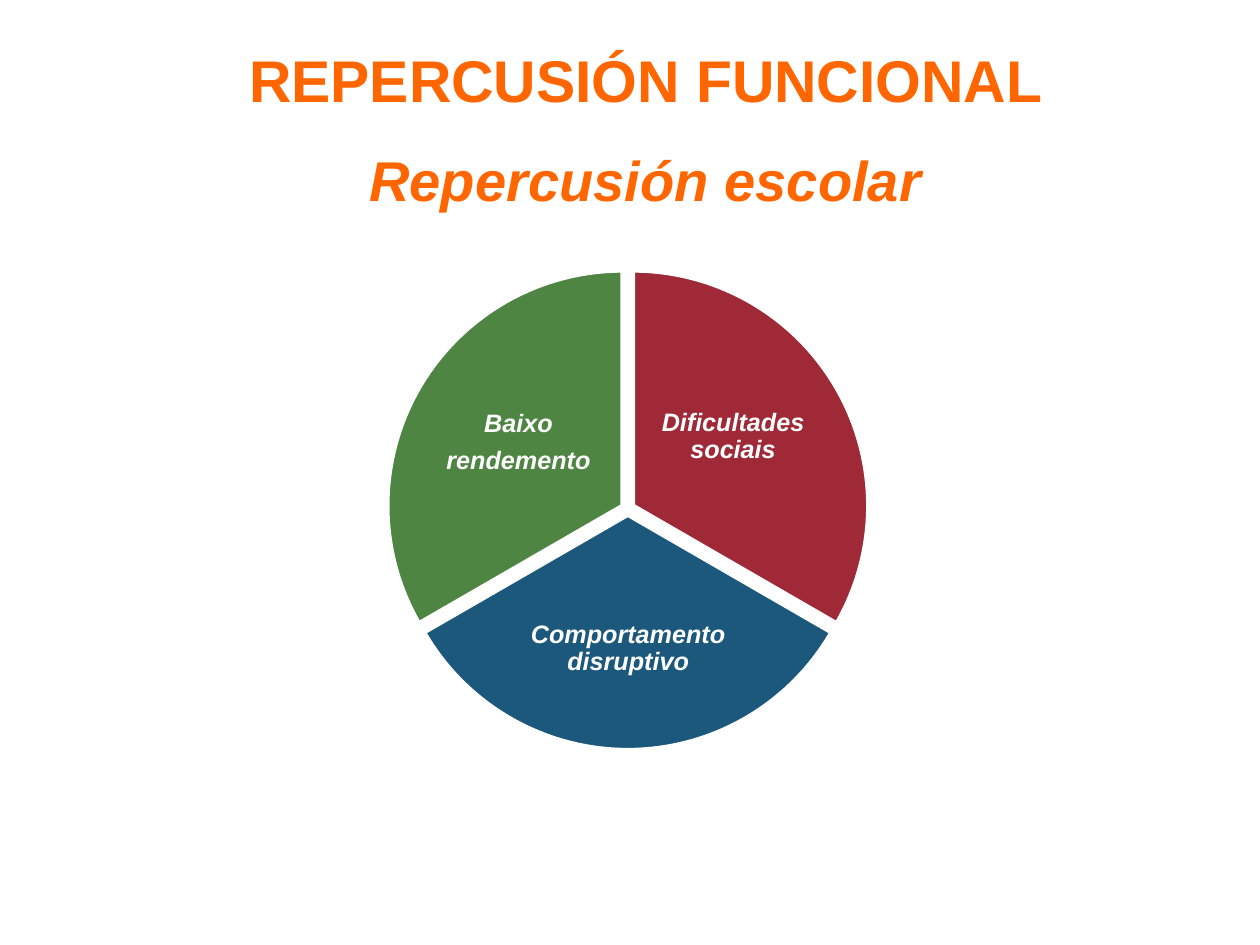
import math

from pptx import Presentation
from pptx import util as u
from pptx.dml.color import RGBColor
from pptx.enum import shapes, text

FONT = "Arial"
ORANGE, WHITE = "FF6600", "FFFFFF"

# Pie geometry, in points
CENTER_X, CENTER_Y = 299, 242.3
DIAMETER = 224
EXPLOSION = 2.88
SWEEP = 120

# Start angle (clockwise from east), colour, label lines, label box
SLICES = [
    (270, "9F2936", ["Dificultades sociais"], (311, 170.6, 76.3, 74.9)),
    (30, "1B587C", ["Comportamento disruptivo"], (248.4, 274.3, 101.5, 69.1)),
    (150, "4E8542", ["Baixo", "rendemento"], (208.8, 173.5, 76.3, 74.9)),
]


def color(value):
    return RGBColor.from_string(value)


def add_slice(page, start, fill):
    """Draw one sector, moved outward along its middle angle."""
    middle = math.radians(start + SWEEP / 2)
    left = CENTER_X - DIAMETER / 2 + EXPLOSION * math.cos(middle)
    top = CENTER_Y - DIAMETER / 2 + EXPLOSION * math.sin(middle)
    sector = page.shapes.add_shape(
        shapes.MSO_SHAPE.PIE, u.Pt(left), u.Pt(top), u.Pt(DIAMETER), u.Pt(DIAMETER))
    # Angles are stored in 60000ths of a degree, adjustments in 100000ths
    sector.adjustments[0] = start * 0.6
    sector.adjustments[1] = (start + SWEEP) % 360 * 0.6
    sector.shadow.inherit = False
    sector.fill.solid()
    sector.fill.fore_color.rgb = color(fill)
    sector.line.color.rgb = color(WHITE)
    sector.line.width = u.Pt(2)


def add_text(page, bounds, lines, ink, anchor, inset, gap):
    """Add centred bold text; each line is (words, size, italic)."""
    box = page.shapes.add_textbox(*(u.Pt(length) for length in bounds))
    frame = box.text_frame
    frame.word_wrap = True
    frame.vertical_anchor = anchor
    frame.margin_left = frame.margin_right = u.Pt(inset[0])
    frame.margin_top = frame.margin_bottom = u.Pt(inset[1])
    for index, (words, size, italic) in enumerate(lines):
        para = frame.add_paragraph() if index else frame.paragraphs[0]
        para.text = words
        para.alignment = text.PP_ALIGN.CENTER
        para.line_spacing = 0.9
        if index:
            para.space_before = u.Pt(gap)
        para.font.name = FONT
        para.font.size = u.Pt(size)
        para.font.bold = True
        para.font.italic = italic
        para.font.color.rgb = color(ink)


def main():
    deck = Presentation()
    deck.slide_width, deck.slide_height = u.Pt(600), u.Pt(450)
    page = deck.slides.add_slide(deck.slide_layouts[6])

    # Pie with its labels
    for start, fill, words, bounds in SLICES:
        add_slice(page, start, fill)
        add_text(page, bounds, [(line, 12, True) for line in words], WHITE,
                 text.MSO_ANCHOR.MIDDLE, (1.2, 1.2), 4.7)

    # Title and subtitle
    add_text(page, (93.6, 20.9, 427.7, 83.5),
             [("REPERCUSIÓN FUNCIONAL", 28, False), ("Repercusión escolar", 26.7, True)],
             ORANGE, text.MSO_ANCHOR.TOP, (3, 3.6), 18)

    deck.save("out.pptx")


if __name__ == "__main__":
    main()
